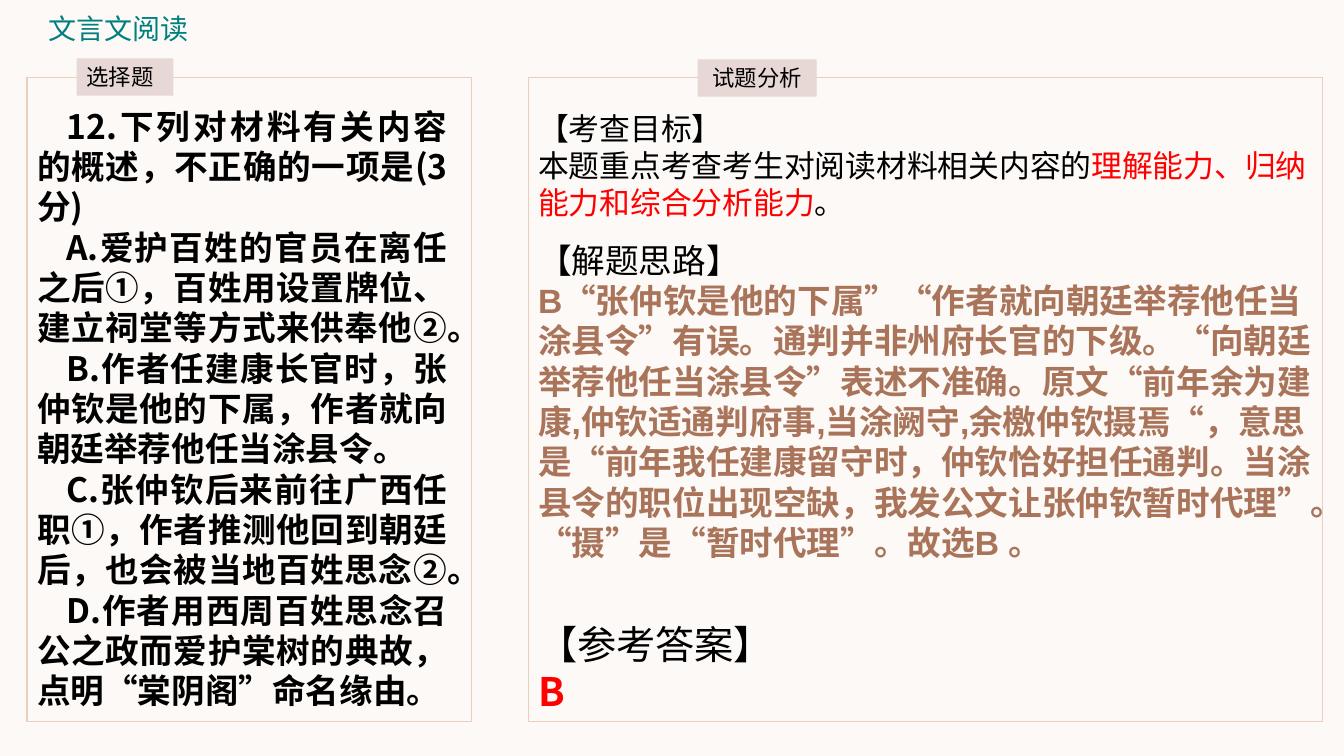
import pptx
import pptx.util
import pptx.dml.color
import pptx.enum.shapes
import pptx.enum.text
import pptx.oxml.ns
import lxml.etree
from dataclasses import dataclass

Pt = pptx.util.Pt
Align = pptx.enum.text.PP_ALIGN


@dataclass(frozen=True)
class Theme:
    back: str = "FCF9F7"
    edge: str = "EBCFBE"
    tag: str = "E7D7D5"
    teal: str = "007F7F"
    ink: str = "000000"
    red: str = "FF0000"
    brown: str = "A97459"
    sans: str = "Noto Sans CJK SC"
    latin: str = "Arial"
    label: int = 16
    title: int = 20
    aim: int = 22
    body: int = 24
    key: int = 28


T = Theme()


def color(code):
    return pptx.dml.color.RGBColor.from_string(code)


def add_run(para, text, size, font=T.sans, ink=T.ink, bold=False):
    run = para.add_run()
    run.text = text
    run.font.size = Pt(size)
    run.font.name = font
    run.font.bold = bold
    run.font.color.rgb = color(ink)
    east = lxml.etree.SubElement(run.font._element, pptx.oxml.ns.qn("a:ea"))
    east.set("typeface", T.sans)


def add_rect(slide, box, fill=None, line=None):
    shape = slide.shapes.add_shape(
        pptx.enum.shapes.MSO_SHAPE.RECTANGLE, *map(Pt, box))
    shape.shadow.inherit = False
    if fill:
        shape.fill.solid()
        shape.fill.fore_color.rgb = color(fill)
    else:
        shape.fill.background()
    if line:
        shape.line.color.rgb = color(line)
        shape.line.width = Pt(1)
    else:
        shape.line.fill.background()
    return shape


def add_text(slide, box):
    frame = slide.shapes.add_textbox(*map(Pt, box)).text_frame
    frame.word_wrap = True
    return frame


def add_head(slide, box):
    """Slide title."""
    para = add_text(slide, box).paragraphs[0]
    add_run(para, "文言文阅读", T.title, ink=T.teal)


def add_panel(slide, box, tab, text, font, align):
    """Outlined panel with a label on its top edge; tab is offset and size."""
    left, top, _, _ = box
    add_rect(slide, box, line=T.edge)
    dx, dy, width, height = tab
    shape = add_rect(slide, (left + dx, top + dy, width, height), fill=T.tag)
    frame = shape.text_frame
    frame.word_wrap = True
    frame.vertical_anchor = pptx.enum.text.MSO_ANCHOR.TOP
    para = frame.paragraphs[0]
    para.alignment = align
    add_run(para, text, T.label, font)


def add_quiz(slide, box):
    """Left panel: the question and its options."""
    left, top, _, _ = box
    add_panel(slide, box, (35.3, -13.7, 69.1, 26.6), "选择题", T.sans, Align.LEFT)
    lines = (
        "12.下列对材料有关内容的概述，不正确的一项是(3分)",
        "A.爱护百姓的官员在离任之后①，百姓用设置牌位、建立祠堂等方式来供奉他②。",
        "B.作者任建康长官时，张仲钦是他的下属，作者就向朝廷举荐他任当涂县令。",
        "C.张仲钦后来前往广西任职①，作者推测他回到朝廷后，也会被当地百姓思念②。",
        "D.作者用西周百姓思念召公之政而爱护棠树的典故，点明“棠阴阁”命名缘由。",
    )
    frame = add_text(slide, (left, top + 16.6, 307.4, 443.5))
    for i, line in enumerate(lines):
        para = frame.add_paragraph() if i else frame.paragraphs[0]
        para.alignment = Align.JUSTIFY
        para._p.get_or_add_pPr().set("indent", str(Pt(21)))
        add_run(para, line, T.body, bold=True)


def add_study(slide, box):
    """Right panel: aim, reasoning and answer, each under its heading."""
    left, top, width, _ = box
    add_panel(slide, box, (121, -13, 85, 26.6), "试题分析", T.latin, Align.CENTER)
    reason = (
        "B“张仲钦是他的下属”“作者就向朝廷举荐他任当涂县令”有误。"
        "通判并非州府长官的下级。“向朝廷举荐他任当涂县令”表述不准确。"
        "原文“前年余为建康,仲钦适通判府事,当涂阙守,余檄仲钦摄焉“，"
        "意思是“前年我任建康留守时，仲钦恰好担任通判。"
        "当涂县令的职位出现空缺，我发公文让张仲钦暂时代理”。"
        "“摄”是“暂时代理”。故选B 。"
    )
    # Offset from panel top, height, size, heading, runs (text, font, ink, bold)
    parts = (
        (19.4, 87.1, T.aim, "【考查目标】", (
            ("本题重点考查考生对阅读材料相关内容的", T.sans, T.ink, False),
            ("理解能力、归纳能力和综合分析能力", T.sans, T.red, False),
            ("。", T.sans, T.ink, False))),
        (112.3, 239.8, T.body, "【解题思路】",
         ((reason, T.latin, T.brown, True),)),
        (383.8, 74.9, T.key, "【参考答案】", (("B", T.sans, T.red, True),)),
    )
    for dy, height, size, head, runs in parts:
        frame = add_text(slide, (left, top + dy, width, height))
        add_run(frame.paragraphs[0], head, size, T.latin)
        para = frame.add_paragraph()
        for text, font, ink, bold in runs:
            add_run(para, text, size, font, ink, bold)


def main():
    deck = pptx.Presentation()
    deck.slide_width, deck.slide_height = Pt(960), Pt(540)
    slide = deck.slides.add_slide(deck.slide_layouts[6])
    slide.background.fill.solid()
    slide.background.fill.fore_color.rgb = color(T.back)
    add_quiz(slide, (19.4, 55.4, 317.5, 460.1))
    add_study(slide, (377.3, 55.4, 567.4, 460.1))
    add_head(slide, (27.4, 5, 168.5, 31.7))
    deck.save("out.pptx")


if __name__ == "__main__":
    main()
